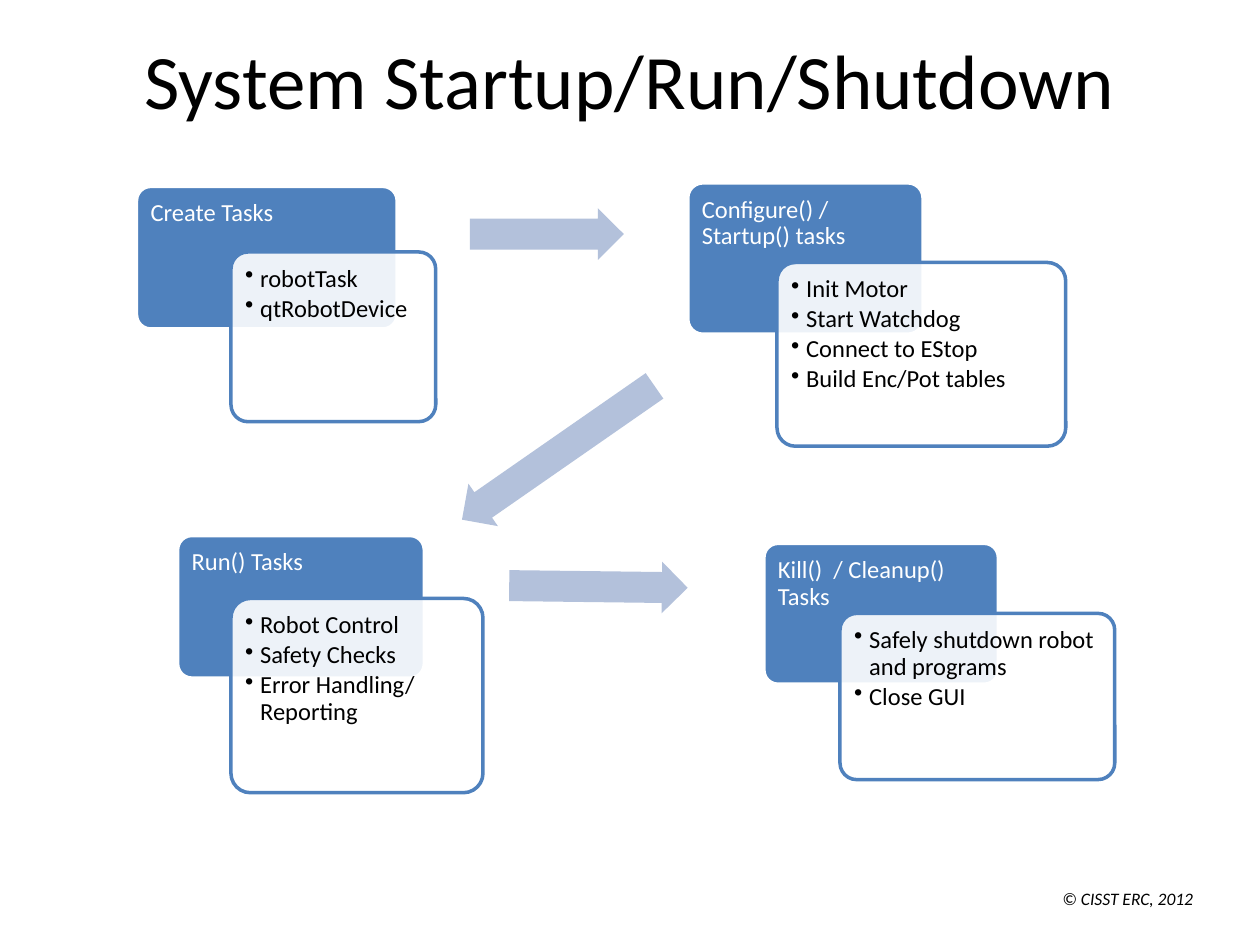
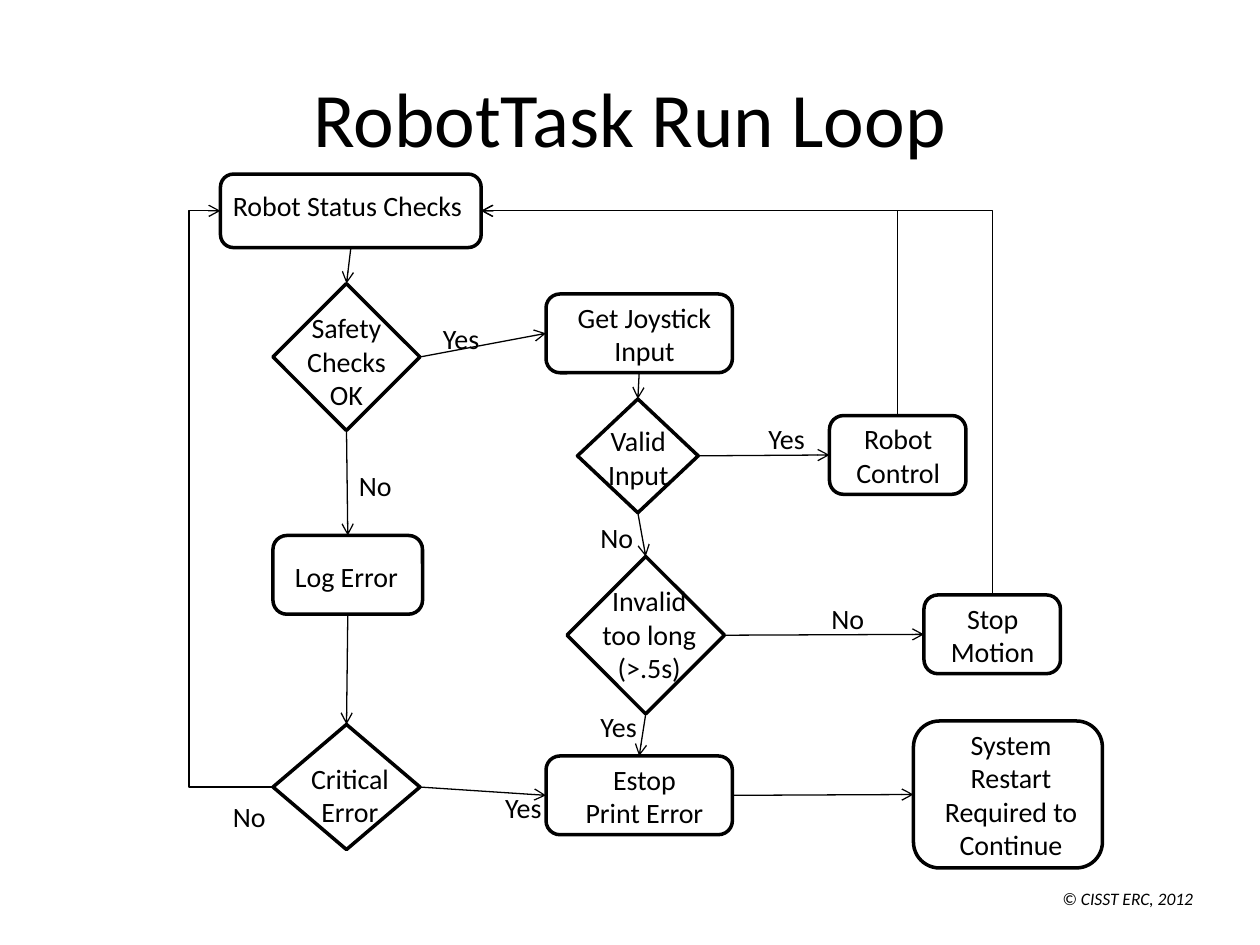
from lxml.etree import SubElement
from pptx import Presentation
from pptx.dml.color import RGBColor
from pptx.enum.shapes import MSO_CONNECTOR, MSO_SHAPE
from pptx.enum.text import MSO_ANCHOR, PP_ALIGN
from pptx.oxml.ns import qn
from pptx.util import Pt

BLACK = RGBColor(0x00, 0x00, 0x00)
WHITE = RGBColor(0xFF, 0xFF, 0xFF)
BLUE = RGBColor(0x4F, 0x81, 0xBD)
PALE_BLUE = RGBColor(0xB3, 0xC1, 0xDB)
FONT = "Calibri"

FOOTER = "© CISST ERC, 2012"
FOOTER_AREA = (600, 504, 120, 20)

STAGES = [
    ("Create Tasks", (78, 106.5, 149, 81.5),
     ["robotTask", "qtRobotDevice"], (132, 144, 117, 97)),
    ("Configure() / Startup() tasks", (393, 104.5, 134.5, 86.5),
     ["Init Motor", "Start Watchdog", "Connect to EStop", "Build Enc/Pot tables"],
     (444, 150, 165, 105)),
    ("Run() Tasks", (101.5, 306, 141, 81.5),
     ["Robot Control", "Safety Checks", "Error Handling/ Reporting"],
     (132, 342, 144, 111)),
    ("Kill()  / Cleanup() Tasks", (436.5, 310.5, 134, 80.5),
     ["Safely shutdown robot and programs", "Close GUI"], (480, 350.5, 157, 95)),
]
STAGE_ARROWS = [
    ((268.5, 119, 88, 29.5), 0),
    ((252, 244, 134, 29.5), 145.2),
    ((291, 320.5, 102, 29.5), 0.7),
]

STEP = MSO_SHAPE.ROUNDED_RECTANGLE
DECISION = MSO_SHAPE.FLOWCHART_DECISION
NODES = {
    "status": (STEP, ["Robot Status Checks"], (126, 99.5, 149, 42), (126, 104, 150, 32)),
    "safety": (DECISION, ["Safety Checks OK"], (156, 162, 84, 84), (162, 174, 72, 66)),
    "log": (STEP, ["Log Error"], (156, 306, 85.5, 45), (159, 316, 78, 27)),
    "joystick": (STEP, ["Get Joystick Input"], (312, 168, 106.5, 45), (317.5, 168, 101.5, 46)),
    "valid": (DECISION, ["Valid Input"], (330, 228, 69, 65), (335.5, 238.5, 58.5, 46)),
    "critical": (DECISION, ["Critical Error"], (156, 414, 84, 71.5), (168, 431.5, 64, 46)),
    "estop": (STEP, ["Estop", "Print Error"], (312, 432, 106.5, 45), (317.5, 432, 101.5, 46)),
    "restart": (STEP, ["System Restart Required to Continue"],
                (522, 412, 108, 84), (527, 412, 101.5, 85)),
    "control": (STEP, ["Robot Control"], (474, 237.5, 78, 45), (468, 237.5, 90.5, 46)),
    "invalid": (DECISION, ["Invalid too long", "(>.5s)"], (324, 318, 90, 90), (336, 330, 70, 66)),
    "stop": (STEP, ["Stop Motion"], (528, 340, 78, 45), (522, 340, 90.5, 46)),
}
FLOWS = [
    ("status", "bottom", "safety", "top"),
    ("safety", "bottom", "log", "top"),
    ("safety", "right", "joystick", "left"),
    ("joystick", "bottom", "valid", "top"),
    ("valid", "bottom", "invalid", "top"),
    ("valid", "right", "control", "left"),
    ("log", "bottom", "critical", "top"),
    ("critical", "right", "estop", "left"),
    ("estop", "right", "restart", "left"),
    ("invalid", "bottom", "estop", "top"),
    ("invalid", "right", "stop", "left"),
]
RETURNS = [
    ("control", "top", "status", "right", 513),
    ("critical", "left", "status", "left", 108),
    ("stop", "top", "status", "right", 567),
]
ANSWERS = [
    ("Yes", 246, 180), ("No", 198, 264), ("Yes", 432, 237.5), ("No", 336, 294),
    ("No", 468, 340), ("Yes", 336, 402), ("Yes", 281.5, 448), ("No", 126, 453.5),
]
SIDES = {"top": (0.5, 0), "bottom": (0.5, 1), "left": (0, 0.5), "right": (1, 0.5)}


def points(values):
    return [Pt(value) for value in values]


def add_bullet(para):
    properties = para._p.get_or_add_pPr()
    properties.set("marL", str(Pt(8.64)))
    properties.set("indent", str(-Pt(8.64)))
    SubElement(properties, qn("a:buChar")).set("char", "•")


def write(shape, lines, size, color=BLACK, align=PP_ALIGN.LEFT, italic=False,
          bullets=False, spacing=None, after=None, **frame_format):
    frame = shape.text_frame
    for name, value in {"word_wrap": True, **frame_format}.items():
        setattr(frame, name, value)
    for index, line in enumerate(lines):
        para = frame.add_paragraph() if index else frame.paragraphs[0]
        for name, value in {"alignment": align, "line_spacing": spacing,
                            "space_after": after}.items():
            setattr(para, name, value)
        if bullets:
            add_bullet(para)
        span = para.add_run()
        span.text = line
        for name, value in {"name": FONT, "size": Pt(size), "italic": italic}.items():
            setattr(span.font, name, value)
        span.font.color.rgb = color


def add_text(page, area, lines, size, **text_format):
    write(page.shapes.add_textbox(*points(area)), lines, size, **text_format)


def add_outline(page, kind, area, fill=None, line=None, adjustments=()):
    shape = page.shapes.add_shape(kind, *points(area))
    shape.shadow.inherit = False
    for index, value in enumerate(adjustments):
        shape.adjustments[index] = value
    if fill is None:
        shape.fill.background()
    else:
        shape.fill.solid()
        shape.fill.fore_color.rgb = fill
    if line is None:
        shape.line.fill.background()
    else:
        shape.line.color.rgb = line
        shape.line.width = Pt(2)
    return shape


def add_card(page, area, lines, fill, line, color, **text_format):
    card = add_outline(page, STEP, area, fill, line, [0.1])
    inset = Pt(8 - 0.029 * min(area[2:]))
    margins = {f"margin_{side}": inset for side in SIDES}
    write(card, lines, 14, color, spacing=0.9, vertical_anchor=MSO_ANCHOR.TOP,
          **margins, **text_format)
    return card


def side_point(node, side):
    left, top, width, height = NODES[node][2]
    across, down = SIDES[side]
    return left + width * across, top + height * down


def add_flow(page, source, source_side, target, target_side, turn=None):
    start, end = side_point(source, source_side), side_point(target, target_side)
    kind = MSO_CONNECTOR.STRAIGHT if turn is None else MSO_CONNECTOR.ELBOW
    flow = page.shapes.add_connector(kind, *points(start + end))
    flow.line.color.rgb = BLACK
    flow.line.width = Pt(0.75)
    properties = flow._element.spPr
    SubElement(properties.find(qn("a:ln")), qn("a:tailEnd")).set("type", "arrow")
    SubElement(properties, qn("a:effectLst"))
    if turn is not None:
        share = (turn - start[0]) / (end[0] - start[0])
        guide = SubElement(properties.find(qn("a:prstGeom")).find(qn("a:avLst")), qn("a:gd"))
        guide.set("name", "adj1")
        guide.set("fmla", f"val {round(share * 100000)}")


def add_page(deck, title, title_top):
    page = deck.slides.add_slide(deck.slide_layouts[6])
    add_text(page, FOOTER_AREA, [FOOTER], 10, italic=True)
    add_text(page, (36, title_top, 648, 90), [title], 44, align=PP_ALIGN.CENTER,
             vertical_anchor=MSO_ANCHOR.MIDDLE)
    return page


def build_stages(deck):
    page = add_page(deck, "System Startup/Run/Shutdown", 0)
    for heading, heading_area, details, detail_area in STAGES:
        add_card(page, heading_area, [heading], BLUE, WHITE, WHITE)
        panel = add_card(page, detail_area, details, WHITE, BLUE, BLACK,
                         bullets=True, after=Pt(2))
        tint = panel._element.spPr.find(qn("a:solidFill"))[0]
        SubElement(tint, qn("a:alpha")).set("val", "90000")
    for area, angle in STAGE_ARROWS:
        arrow = add_outline(page, MSO_SHAPE.RIGHT_ARROW, area, PALE_BLUE, adjustments=[0.6, 0.5])
        arrow.rotation = angle


def build_run_loop(deck):
    page = add_page(deck, "RobotTask Run Loop", 21.5)
    for kind, lines, area, text_area in NODES.values():
        add_outline(page, kind, area, line=BLACK, adjustments=[0.177] if kind == STEP else [])
        align = PP_ALIGN.LEFT if lines == NODES["status"][1] else PP_ALIGN.CENTER
        add_text(page, text_area, lines, 16, align=align)
    for flow in FLOWS + RETURNS:
        add_flow(page, *flow)
    for answer, left, top in ANSWERS:
        add_text(page, (left, top, 38, 27), [answer], 16)


def main():
    deck = Presentation()
    deck.slide_width, deck.slide_height = Pt(720), Pt(540)
    build_stages(deck)
    build_run_loop(deck)
    deck.save("out.pptx")


if __name__ == "__main__":
    main()
